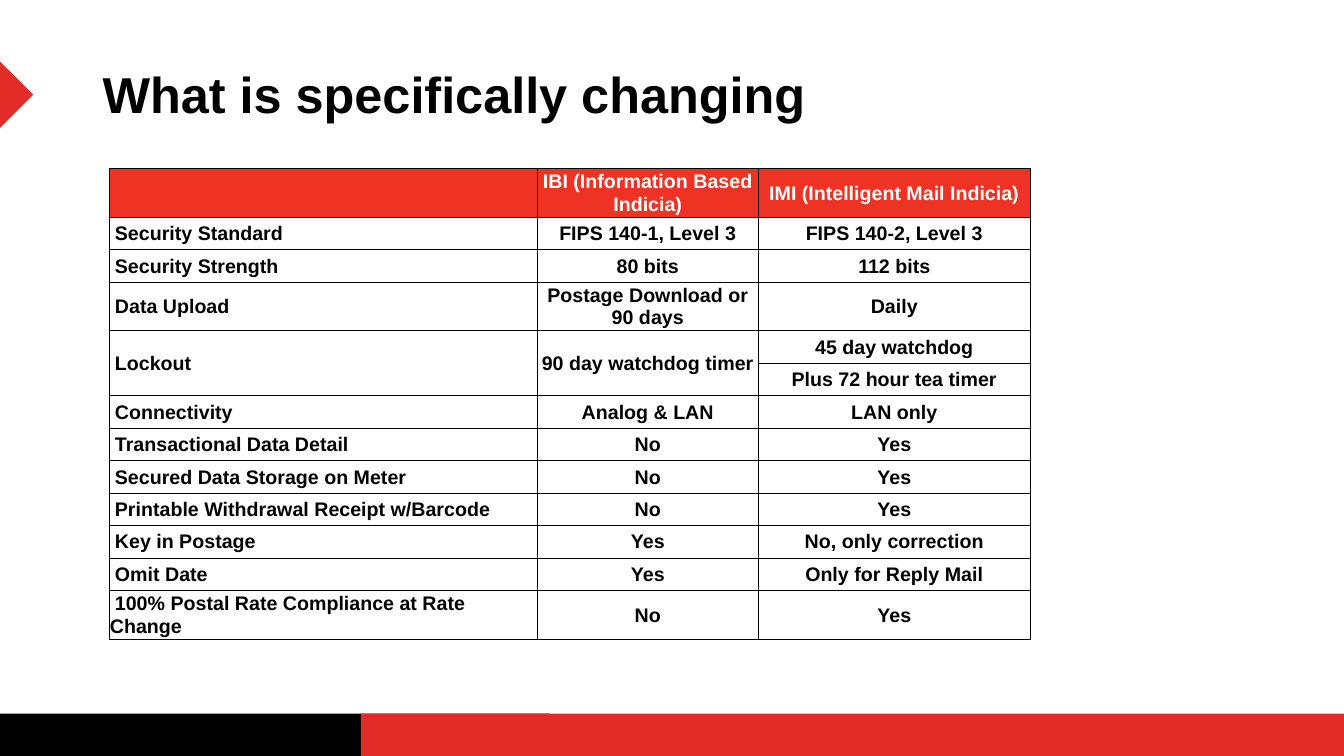
from pptx import Presentation
from pptx.dml.color import RGBColor
from pptx.enum.shapes import MSO_SHAPE as Shape
from pptx.enum.text import MSO_ANCHOR as Anchor, PP_ALIGN as Align
from pptx.oxml import parse_xml
from pptx.oxml.ns import nsdecls
from pptx.util import Inches, Pt

TITLE = "What is specifically changing"
ROWS = [
    ("", "IBI (Information Based Indicia)", "IMI (Intelligent Mail Indicia)"),
    ("Security Standard", "FIPS 140-1, Level 3", "FIPS 140-2, Level 3"),
    ("Security Strength", "80 bits", "112 bits"),
    ("Data Upload", "Postage Download or 90 days", "Daily"),
    ("Lockout", "90 day watchdog timer", "45 day watchdog"),
    ("", "", "Plus 72 hour tea timer"),
    ("Connectivity", "Analog & LAN", "LAN only"),
    ("Transactional Data Detail", "No", "Yes"),
    ("Secured Data Storage on Meter", "No", "Yes"),
    ("Printable Withdrawal Receipt w/Barcode", "No", "Yes"),
    ("Key in Postage", "Yes", "No, only correction"),
    ("Omit Date", "Yes", "Only for Reply Mail"),
    ("100% Postal Rate Compliance at Rate Change", "No", "Yes"),
]
LOCKOUT = 4
TALL = {0: 1.5, 3: 1.5, 12: 1.5}
COLS = (4.25, 2.19, 2.7)
TABLE_X, TABLE_Y, TABLE_H = 1.08, 1.67, 4.67
W, H = 13.33, 7.5
BAR_H = 0.06 * H
BAR_Y = 7.08
RED, HEAD, BLACK, WHITE = "E32B27", "EE3224", "000000", "FFFFFF"
DECOR = [
    (Shape.RECTANGLE, 0, BAR_Y, 5.45, BAR_H, 0, BLACK),
    (Shape.ISOSCELES_TRIANGLE, -0.18, 0.6 + 0.17, 0.68, 0.34, 90, RED),
    (Shape.RECTANGLE, 3.58, BAR_Y, W - 3.58, BAR_H, 0, RED),
]


def rgb(value):
    return RGBColor.from_string(value)


def write(p, text, size, color):
    r = p.add_run()
    r.text = text
    for key, value in dict(name="Arial", size=Pt(size), bold=True).items():
        setattr(r.font, key, value)
    r.font.color.rgb = rgb(color)


def add_borders(cell):
    for side in ("lnL", "lnR", "lnT", "lnB"):
        cell._tc.get_or_add_tcPr().append(parse_xml(
            f'<a:{side} {nsdecls("a")} w="{Pt(0.5)}"><a:solidFill>'
            f'<a:srgbClr val="{BLACK}"/></a:solidFill></a:{side}>'))


def fill_cell(cell, text, row, col):
    margins = dict(margin_left=0.01, margin_top=0.01, margin_right=0.01, margin_bottom=0)
    for key, value in margins.items():
        setattr(cell, key, Inches(value))
    cell.vertical_anchor = Anchor.MIDDLE
    add_borders(cell)
    if row == 0:
        cell.fill.solid()
        cell.fill.fore_color.rgb = rgb(HEAD)
    else:
        cell.fill.background()
    p = cell.text_frame.paragraphs[0]
    if col:
        p.alignment = Align.CENTER
    else:
        p._p.get_or_add_pPr().set("indent", str(Inches(0.05)))
    write(p, text, 14, BLACK if row else WHITE)


def main():
    prs = Presentation()
    prs.slide_width, prs.slide_height = Inches(W), Inches(H)
    s = prs.slides.add_slide(prs.slide_layouts[6])

    for kind, x, y, w, h, turn, color in DECOR:
        sp = s.shapes.add_shape(kind, Inches(x), Inches(y), Inches(w), Inches(h))
        sp.rotation = turn
        sp.shadow.inherit = False
        sp.fill.solid()
        sp.fill.fore_color.rgb = rgb(color)
        sp.line.fill.background()

    frame = s.shapes.add_table(len(ROWS), len(COLS), Inches(TABLE_X), Inches(TABLE_Y),
                               Inches(sum(COLS)), Inches(TABLE_H))
    table = frame.table
    table.first_row = table.horz_banding = False
    for column, width in zip(table.columns, COLS):
        column.width = Inches(width)
    shares = [TALL.get(i, 1) for i in range(len(ROWS))]
    for i, texts in enumerate(ROWS):
        table.rows[i].height = Inches(TABLE_H * shares[i] / sum(shares))
        for j, text in enumerate(texts):
            fill_cell(table.cell(i, j), text, i, j)
    for j in range(2):
        table.cell(LOCKOUT, j).merge(table.cell(LOCKOUT + 1, j))

    tf = s.shapes.add_textbox(Inches(0.92), Inches(0.58), Inches(7.24), Inches(0.71)).text_frame
    tf.word_wrap = False
    write(tf.paragraphs[0], TITLE, 36, BLACK)
    prs.save("out.pptx")


if __name__ == "__main__":
    main()
